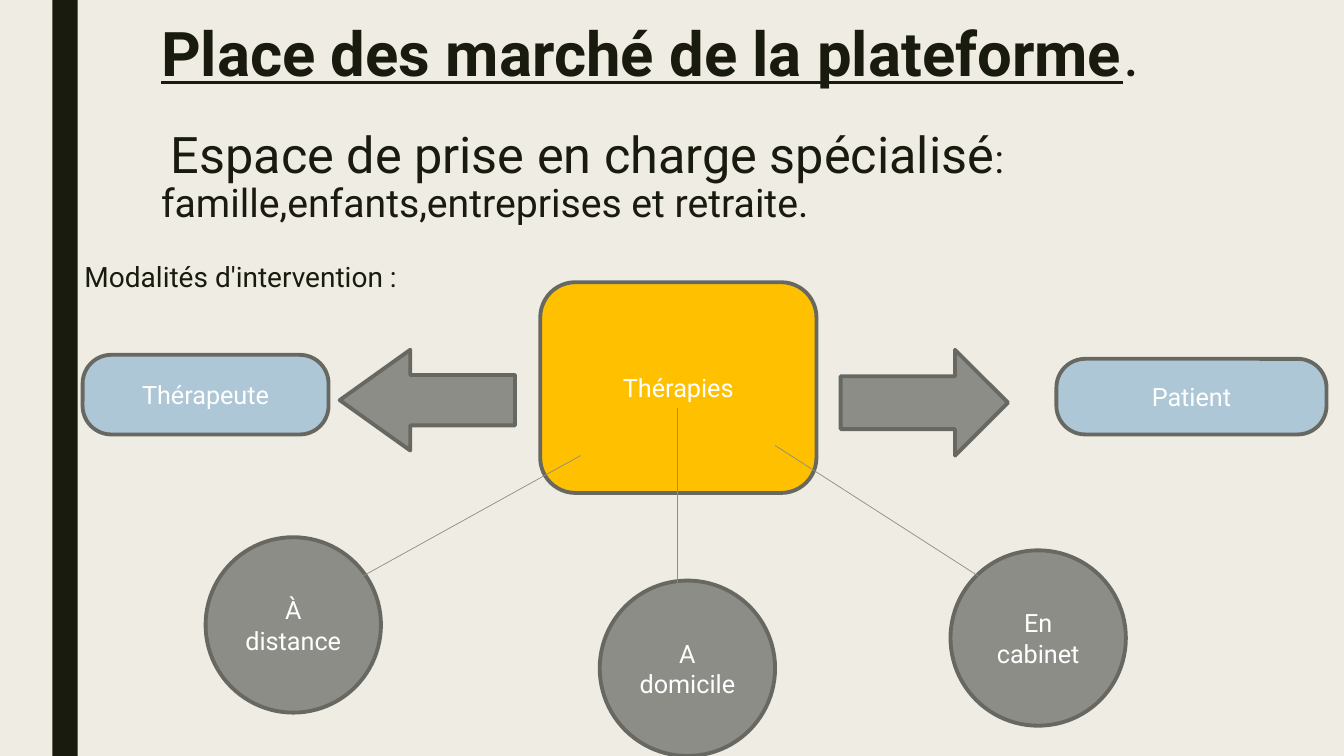
import pptx
import pptx.util
import pptx.dml.color
import pptx.enum.shapes
import pptx.enum.text
import pptx.oxml.ns
import lxml.etree

THEME = {
    "font": "Roboto", "paper": "EFEDE3", "ink": "191B0E", "white": "FFFFFF",
    "gold": "FFC000", "sky": "ADC7D6", "grey": "8C8D86", "edge": "686863",
    "heading": 44, "subheading": 36, "detail": 28, "body": 20, "label": 18,
    "outline": 2.75, "link": 0.5,
}
KINDS = pptx.enum.shapes.MSO_SHAPE

deck = pptx.Presentation()
deck.slide_width = pptx.util.Inches(13.33)
deck.slide_height = pptx.util.Inches(7.5)
COLUMN = deck.slide_width / 160
ROW = deck.slide_height / 90
slide = deck.slides.add_slide(deck.slide_layouts[6])


def add_run(paragraph, text, size, color="ink", bold=False):
    run = paragraph.add_run()
    run.text = text
    run.font.name = THEME["font"]
    run.font.size = pptx.util.Pt(THEME[size])
    run.font.color.rgb = pptx.dml.color.RGBColor.from_string(THEME[color])
    run.font.bold = run.font.underline = bold


def add_block(kind, left, top, width, height, fill, label="", adjust=(), outlined=True):
    block = slide.shapes.add_shape(
        kind, round(left * COLUMN), round(top * ROW), round(width * COLUMN), round(height * ROW))
    block.shadow.inherit = False
    block.fill.solid()
    block.fill.fore_color.rgb = pptx.dml.color.RGBColor.from_string(THEME[fill])
    if outlined:
        block.line.color.rgb = pptx.dml.color.RGBColor.from_string(THEME["edge"])
        block.line.width = pptx.util.Pt(THEME["outline"])
    else:
        block.line.fill.background()
    for index, value in enumerate(adjust):
        block.adjustments[index] = value
    if label:
        block.text_frame.word_wrap = True
        block.text_frame.vertical_anchor = pptx.enum.text.MSO_ANCHOR.MIDDLE
        paragraph = block.text_frame.paragraphs[0]
        paragraph.alignment = pptx.enum.text.PP_ALIGN.CENTER
        add_run(paragraph, label, "label", "white")


slide.background.fill.solid()
slide.background.fill.fore_color.rgb = pptx.dml.color.RGBColor.from_string(THEME["paper"])
add_block(KINDS.RECTANGLE, 6.24, 0, 3, 90, "ink", outlined=False)

title = slide.shapes.add_textbox(
    round(18 * COLUMN), round(1.68 * ROW), round(126 * COLUMN), round(26.76 * ROW)).text_frame
title.word_wrap = True
title.margin_top = round(1.15 * ROW)
heading = title.paragraphs[0]
heading.line_spacing = 0.89
add_run(heading, "Place des marché de la plateforme", "heading", bold=True)
add_run(heading, ".", "heading")
care_space = title.add_paragraph()
care_space.line_spacing = 0.89
care_space.space_before = pptx.util.Pt(29)
add_run(care_space, " ", "detail")
add_run(care_space, "Espace de prise en charge spécialisé", "subheading")
add_run(care_space, ": famille,enfants,entreprises et retraite.", "detail")

modalities = slide.shapes.add_textbox(
    round(6.36 * COLUMN), round(30.6 * ROW), round(56 * COLUMN), round(6 * ROW)).text_frame
modalities.word_wrap = True
modalities.margin_left = round(3.7 * COLUMN)
modalities.paragraphs[0].line_spacing = 0.94
add_run(modalities.paragraphs[0], "Modalités d'intervention :", "body")

add_block(KINDS.ROUNDED_RECTANGLE, 64.32, 33.6, 32.88, 25.08, "gold", "Thérapies")
add_block(KINDS.ROUNDED_RECTANGLE, 9.84, 42.24, 29.28, 9.48, "sky", "Thérapeute", [0.36])
add_block(KINDS.ROUNDED_RECTANGLE, 125.76, 42.72, 32.16, 9, "sky", "Patient", [0.38])

for mode, left, top in [("À distance", 24.48, 63.96), ("A domicile", 71.4, 69.12),
                        ("En cabinet", 113.16, 65.52)]:
    add_block(KINDS.OVAL, left, top, 20.88, 20.88, "grey", mode)

for start_x, start_y, end_x, end_y in [(80.64, 48.6, 80.64, 74.4), (69.12, 54.24, 35.52, 72.84),
                                       (92.28, 53.04, 121.8, 72)]:
    link = slide.shapes.add_connector(
        pptx.enum.shapes.MSO_CONNECTOR.STRAIGHT, round(start_x * COLUMN), round(start_y * ROW),
        round(end_x * COLUMN), round(end_y * ROW))
    link.line.color.rgb = pptx.dml.color.RGBColor.from_string(THEME["grey"])
    link.line.width = pptx.util.Pt(THEME["link"])
    lxml.etree.SubElement(link.line._ln, pptx.oxml.ns.qn("a:tailEnd"), type="triangle")
    lxml.etree.SubElement(link._element.spPr, pptx.oxml.ns.qn("a:effectLst"))

add_block(KINDS.RIGHT_ARROW, 100.08, 41.64, 19.92, 12.6, "grey")
add_block(KINDS.LEFT_ARROW, 40.44, 41.64, 20.88, 12, "grey", adjust=[0.5, 0.7])

deck.save("out.pptx")
